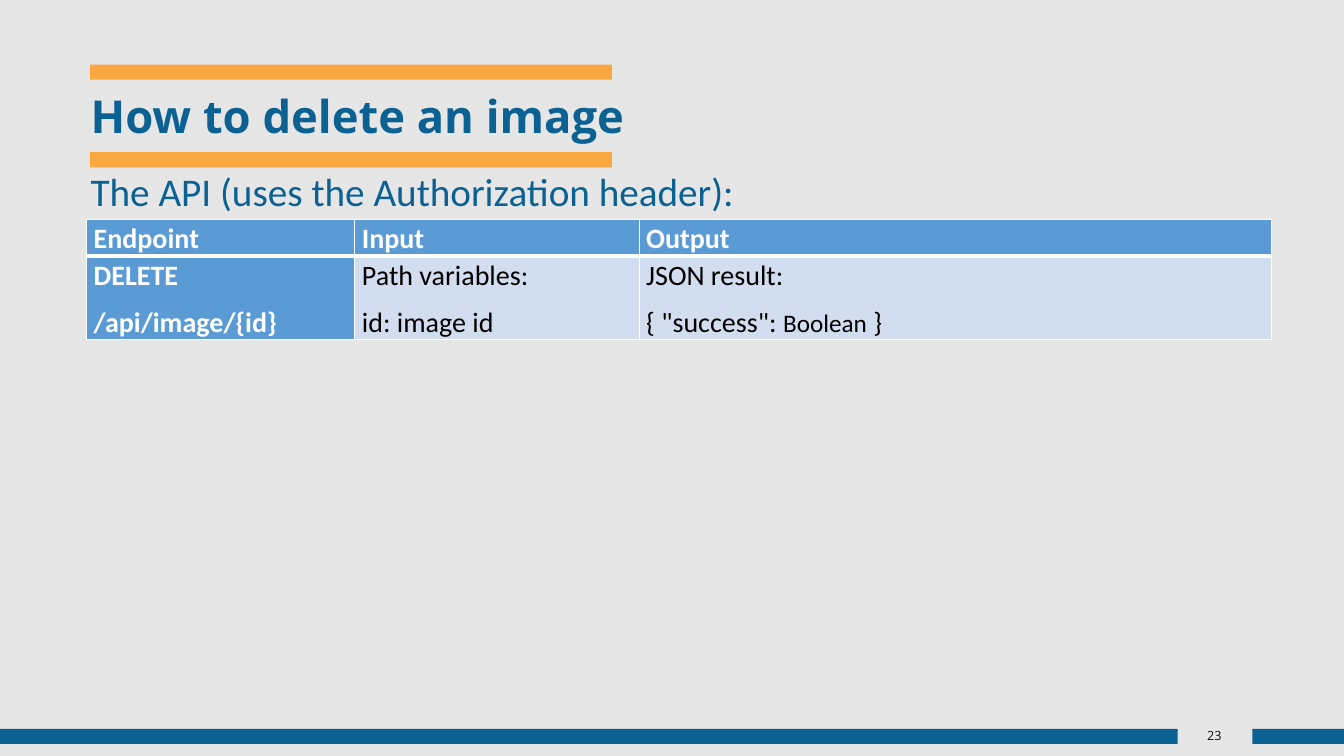
from dataclasses import dataclass

import lxml.etree
import pptx
import pptx.dml.color
import pptx.enum.shapes
import pptx.enum.text
import pptx.oxml.ns
import pptx.util

Inches = pptx.util.Inches
Pt = pptx.util.Pt
ALIGN = pptx.enum.text.PP_ALIGN
ANCHOR = pptx.enum.text.MSO_ANCHOR


@dataclass(frozen=True)
class Theme:
    background: str = "E7E6E6"
    orange: str = "FAA73F"
    blue: str = "0C6193"
    header: str = "5B9BD5"
    body: str = "D2DEEF"
    white: str = "FFFFFF"
    black: str = "000000"
    number: str = "0D0D0D"
    heading_font: str = "Open Sans"
    body_font: str = "Calibri"
    title_size: float = 32.4
    subtitle_size: float = 28
    cell_size: float = 20
    type_size: float = 18
    number_size: float = 9


THEME = Theme()


def rgb(color):
    return pptx.dml.color.RGBColor.from_string(color)


def paint(fill, color):
    fill.solid()
    fill.fore_color.rgb = rgb(color)


def add_run(p, text, size, color, font, bold=False):
    r = p.add_run()
    r.text = text
    r.font.size = Pt(size)
    r.font.color.rgb = rgb(color)
    r.font.name = font
    r.font.bold = bold


def add_bar(s, left, top, width, color):
    sp = s.shapes.add_shape(
        pptx.enum.shapes.MSO_SHAPE.RECTANGLE,
        Inches(left), Inches(top), Inches(width), Inches(0.15))
    sp.shadow.inherit = False
    paint(sp.fill, color)
    sp.line.fill.background()


def add_label(s, box, text, size, color, font, bold=False,
              align=ALIGN.LEFT, anchor=ANCHOR.MIDDLE):
    sp = s.shapes.add_textbox(*(Inches(v) for v in box))
    tf = sp.text_frame
    tf.word_wrap = True
    tf.vertical_anchor = anchor
    p = tf.paragraphs[0]
    p.alignment = align
    add_run(p, text, size, color, font, bold)


def set_borders(cell, widths):
    tc_pr = cell._tc.get_or_add_tcPr()
    qn = pptx.oxml.ns.qn
    for i, (side, width) in enumerate(widths.items()):
        ln = lxml.etree.Element(qn(f"a:ln{side}"), w=str(Pt(width)))
        fill = lxml.etree.SubElement(ln, qn("a:solidFill"))
        lxml.etree.SubElement(fill, qn("a:srgbClr"), val=THEME.white)
        tc_pr.insert(i, ln)


def fill_cell(cell, lines, emphasised):
    cell.margin_left = cell.margin_right = Inches(0.07)
    cell.margin_top = cell.margin_bottom = 0
    paint(cell.fill, THEME.header if emphasised else THEME.body)
    color = THEME.white if emphasised else THEME.black
    tf = cell.text_frame
    for i, runs in enumerate(lines):
        p = tf.add_paragraph() if i else tf.paragraphs[0]
        p.line_spacing = 1.07
        p.space_after = Pt(8)
        for text, size in runs:
            add_run(p, text, size, color, THEME.body_font, emphasised)


def add_api_table(s, left, top, widths, heights, rows):
    table = s.shapes.add_table(
        len(heights), len(widths), Inches(left), Inches(top),
        Inches(sum(widths)), Inches(sum(heights))).table
    for column, width in zip(table.columns, widths):
        column.width = Inches(width)
    for row, height in zip(table.rows, heights):
        row.height = Inches(height)
    for y, row in enumerate(rows):
        for x, lines in enumerate(row):
            cell = table.cell(y, x)
            fill_cell(cell, lines, y == 0 or x == 0)
            set_borders(cell, {"L": 1, "R": 1,
                               "T": 3 if y == 1 else 1,
                               "B": 3 if y == 0 else 1})


def plain(*lines):
    return [[(line, THEME.cell_size)] for line in lines]


def main():
    prs = pptx.Presentation()
    prs.slide_width = Inches(13.33)
    prs.slide_height = Inches(7.5)
    s = prs.slides.add_slide(prs.slide_layouts[6])
    paint(s.background.fill, THEME.background)

    for top in (0.64, 1.51):
        add_bar(s, 0.89, top, 5.18, THEME.orange)
    for left, width in ((0, 11.68), (12.42, 0.91)):
        add_bar(s, left, 7.23, width, THEME.blue)

    add_label(s, (11.68, 7.15, 0.73, 0.29), "23", THEME.number_size,
              THEME.number, THEME.heading_font, align=ALIGN.CENTER)
    add_label(s, (0.8, 0.88, 11.62, 0.53), "How to delete an image",
              THEME.title_size, THEME.blue, THEME.heading_font, bold=True)
    add_label(s, (0.8, 1.61, 11.87, 0.57),
              "The API (uses the Authorization header):",
              THEME.subtitle_size, THEME.blue, THEME.body_font,
              anchor=ANCHOR.TOP)

    success = [('{ "success": ', THEME.cell_size),
               ("Boolean", THEME.type_size), (" }", THEME.cell_size)]
    add_api_table(s, 0.86, 2.18, (2.66, 2.82, 6.27), (0.36, 0.81), [
        [plain("Endpoint"), plain("Input"), plain("Output")],
        [plain("DELETE", "/api/image/{id}"),
         plain("Path variables:", "id: image id"),
         plain("JSON result:") + [success]],
    ])
    prs.save("out.pptx")


if __name__ == "__main__":
    main()
